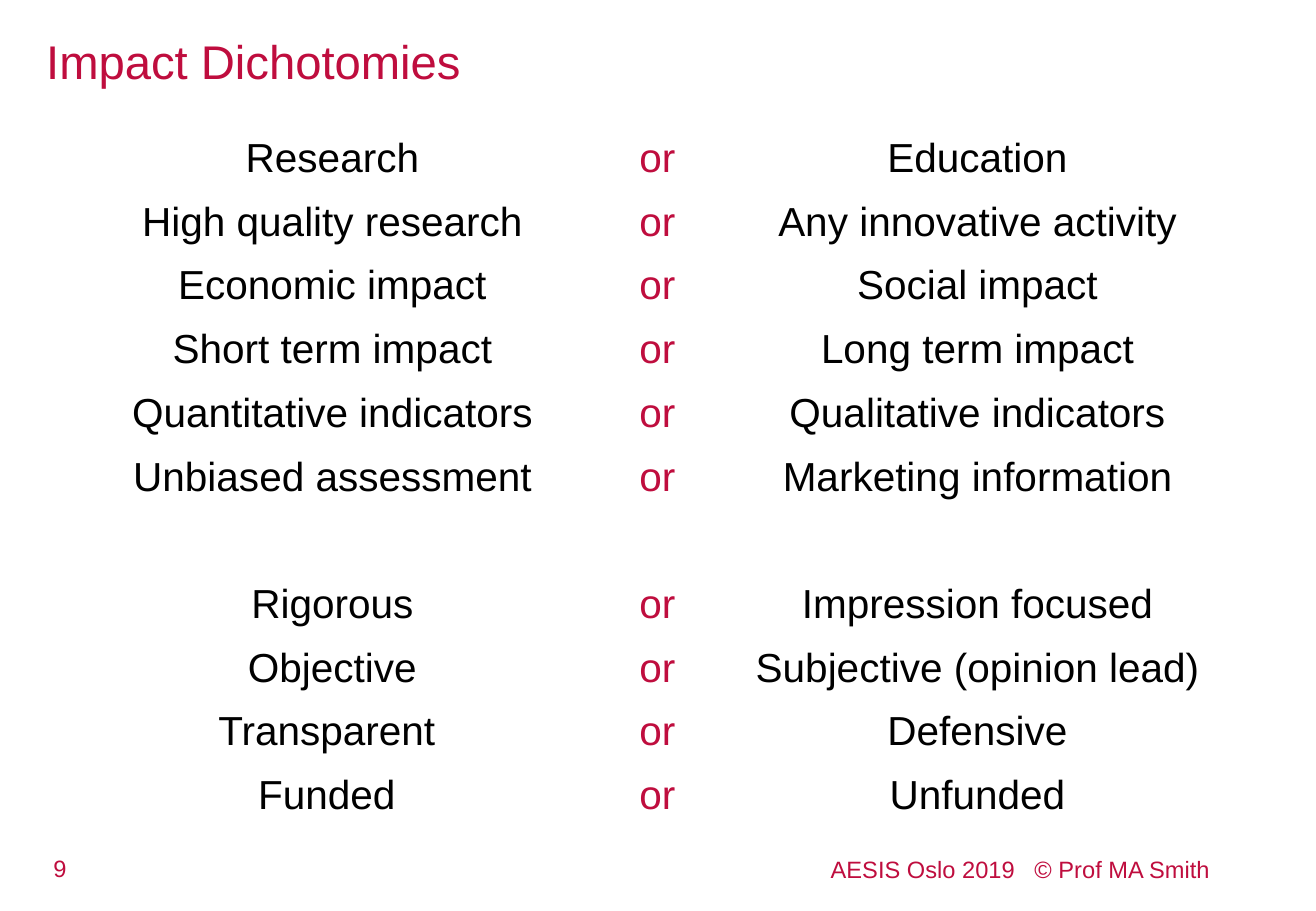
from pptx import Presentation
from pptx.dml.color import RGBColor
from pptx.enum.text import MSO_ANCHOR, MSO_AUTO_SIZE, PP_ALIGN
from pptx.util import Pt

LEFT, CENTER, RIGHT = PP_ALIGN.LEFT, PP_ALIGN.CENTER, PP_ALIGN.RIGHT
TOP, MIDDLE = MSO_ANCHOR.TOP, MSO_ANCHOR.MIDDLE
GROW, FIXED = MSO_AUTO_SIZE.SHAPE_TO_FIT_TEXT, MSO_AUTO_SIZE.NONE
COLORS = {"red": "BF0D3E", "black": "000000", "white": "FFFFFF"}

DICHOTOMIES = [
    ("Research", "Education"),
    ("High quality research", "Any innovative activity"),
    ("Economic impact", "Social impact"),
    ("Short term impact", "Long term impact"),
    ("Quantitative indicators", "Qualitative indicators"),
    ("Unbiased assessment", "Marketing information"),
    None,
    ("Rigorous", "Impression focused"),
    ("Objective", "Subjective (opinion lead)"),
    ("Transparent ", "Defensive"),
    ("Funded ", "Unfunded"),
]


def write(text_frame, text, size, color, alignment):
    text_frame.text = text
    paragraph = text_frame.paragraphs[0]
    paragraph.alignment = alignment
    for run in paragraph.runs:
        run.font.name = "Arial"
        run.font.size = Pt(size)
        run.font.bold = False
        run.font.color.rgb = RGBColor.from_string(COLORS[color])
    return paragraph


presentation = Presentation()
presentation.slide_width, presentation.slide_height = Pt(780), Pt(540)
slide = presentation.slides.add_slide(presentation.slide_layouts[5])

# Title
title = slide.shapes.title
title.left, title.top, title.width, title.height = Pt(27.4), Pt(15.1), Pt(718), Pt(41.8)
title.text_frame.margin_left = 0
title.text_frame.vertical_anchor = MIDDLE
title.text_frame.auto_size = FIXED
write(title.text_frame, "Impact Dichotomies", 28, "red", LEFT)

# Table of opposites
table = slide.shapes.add_table(
    len(DICHOTOMIES), 3, Pt(44), Pt(77), Pt(685.5), Pt(415.5)).table
table.horz_banding = False
for column, width in zip(table.columns, (306, 79.2, 300.3)):
    column.width = Pt(width)
for row, pair in zip(table.rows, DICHOTOMIES):
    row.height = Pt(415.5 / len(DICHOTOMIES))
    for cell in row.cells:
        cell.fill.solid()
        cell.fill.fore_color.rgb = RGBColor.from_string(COLORS["white"])
    if pair:
        texts = (pair[0], "or", pair[1])
        for cell, text, color in zip(row.cells, texts, ("black", "red", "black")):
            write(cell.text_frame, text, 24, color, CENTER)

# Page number and footer
for text, left, top, width, height, alignment, anchor, spacing in (
    ("9", 10.1, 502.5, 51, 24.5, CENTER, TOP, 1.0),
    ("AESIS Oslo 2019   © Prof MA Smith", 248.4, 508.3, 476, 18.7, RIGHT, MIDDLE, 0.6),
):
    box = slide.shapes.add_textbox(Pt(left), Pt(top), Pt(width), Pt(height))
    box.text_frame.word_wrap = True
    box.text_frame.auto_size = GROW
    box.text_frame.vertical_anchor = anchor
    write(box.text_frame, text, 14, "red", alignment).line_spacing = spacing

presentation.save("out.pptx")
